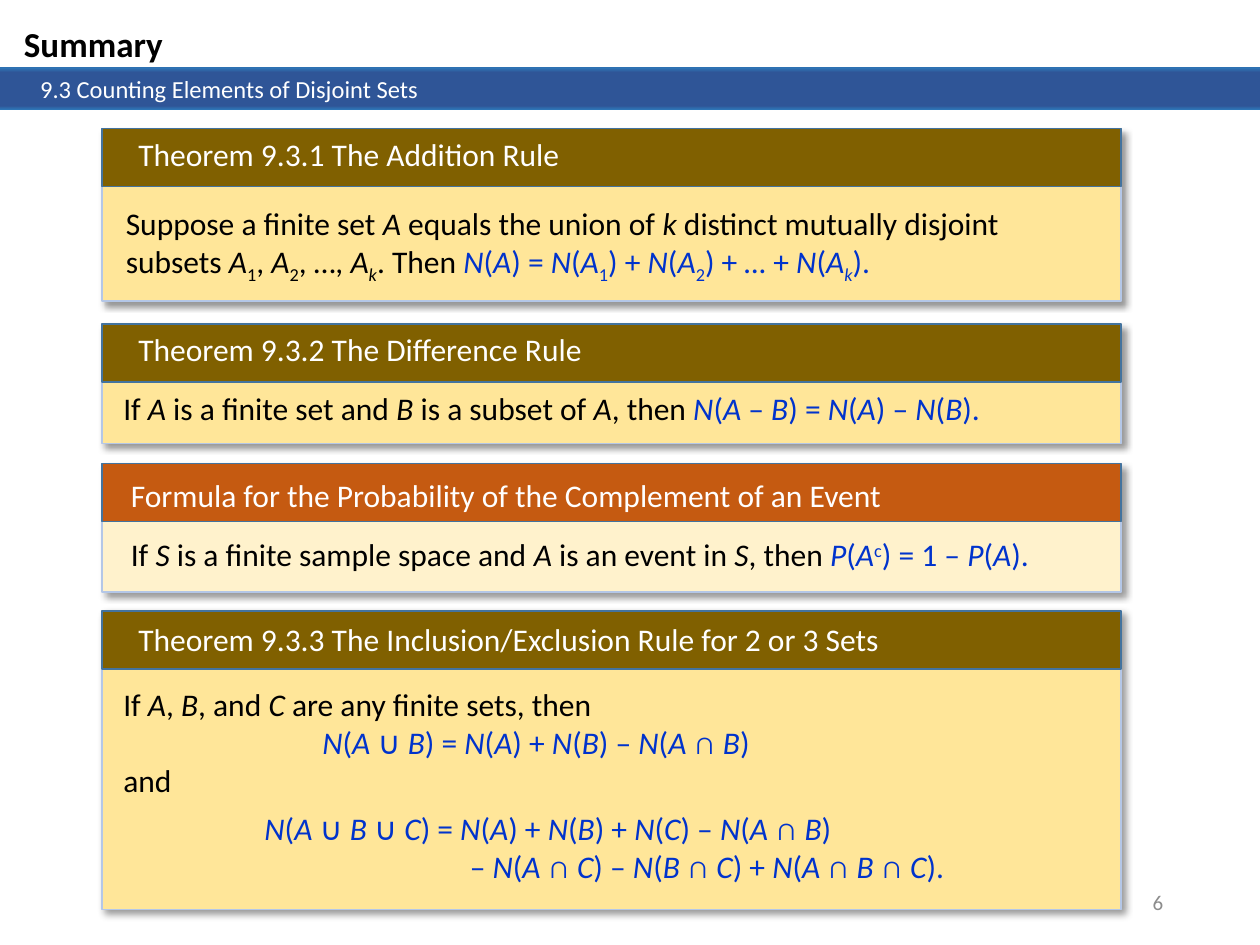
from dataclasses import dataclass
from lxml import etree
from pptx import Presentation
from pptx.dml.color import RGBColor
from pptx.enum.shapes import MSO_SHAPE
from pptx.enum.text import MSO_ANCHOR, MSO_AUTO_SIZE, PP_ALIGN
from pptx.oxml.ns import qn
from pptx.util import Inches, Pt

RECTANGLE = MSO_SHAPE.RECTANGLE
TOP, MIDDLE = MSO_ANCHOR.TOP, MSO_ANCHOR.MIDDLE
LEFT, RIGHT = PP_ALIGN.LEFT, PP_ALIGN.RIGHT
NO_AUTOFIT = MSO_AUTO_SIZE.NONE


@dataclass(frozen=True)
class Theme:
    font: str = "Calibri"
    black: str = "000000"
    white: str = "FFFFFF"
    formula: str = "0033CC"
    number: str = "8C8C8C"
    theorem_head: str = "806000"
    theorem_body: str = "FFE699"
    event_head: str = "C55A11"
    event_body: str = "FFF2CC"
    head_line: str = "43739E"
    body_line: str = "B4C7E7"
    bar_edge: str = "2E75B6"
    bar_core: str = "2F5597"
    title_size: int = 20
    text_size: int = 18
    section_size: int = 14
    number_size: int = 12


THEME = Theme()
BASELINES = {"~": "-25000", "^": "30000"}


def write(paragraph, markup, color, size=THEME.text_size, bold=False):
    """Add runs; *italic*, |formula colour|, ~subscript~ and ^superscript^ toggle."""
    active = set()
    piece = ""
    for char in markup + "\n":
        if char not in "*|~^\n":
            piece += char
            continue
        if piece:
            run = paragraph.add_run()
            run.text = piece
            font = run.font
            font.name, font.size, font.bold = THEME.font, Pt(size), bold
            font.italic = "*" in active
            font.color.rgb = RGBColor.from_string(THEME.formula if "|" in active else color)
            for mark in active & set(BASELINES):
                font._element.set("baseline", BASELINES[mark])
            piece = ""
        active ^= {char}


def add_box(shapes, left, top, width, height, fill=None, line=None):
    """Add a filled rectangle, or a wrapping text box when there is no fill."""
    area = [Inches(length) for length in (left, top, width, height)]
    if fill is None:
        box = shapes.add_textbox(*area)
        box.text_frame.word_wrap = True
        return box
    box = shapes.add_shape(RECTANGLE, *area)
    box.shadow.inherit = False
    box.fill.solid()
    box.fill.fore_color.rgb = RGBColor.from_string(fill)
    if line:
        box.line.color.rgb = RGBColor.from_string(line)
        box.line.width = Pt(1)
    else:
        box.line.fill.background()
    return box


prs = Presentation()
prs.slide_width, prs.slide_height = Inches(10), Inches(7.5)
slide = prs.slides.add_slide(prs.slide_layouts[5])

# Section bar: two overlapping bands with the same gradient
for top, height in ((0.53, 0.3), (0.54, 0.33)):
    bar = add_box(slide.shapes, 0, top, 10, height, THEME.bar_core)
    bar.fill.gradient()
    bar.fill.gradient_angle = 270
    stops = bar._element.spPr.find(qn("a:gradFill")).find(qn("a:gsLst"))
    for stop in list(stops):
        stops.remove(stop)
    for share, color in ((0, THEME.bar_edge), (11, THEME.bar_core),
                         (91, THEME.bar_core), (100, THEME.bar_edge)):
        stop = etree.SubElement(stops, qn("a:gs"), pos=str(share * 1000))
        etree.SubElement(stop, qn("a:srgbClr"), val=color)

bar.text_frame.vertical_anchor = MIDDLE
section = bar.text_frame.paragraphs[0]
section.alignment = LEFT
section._p.get_or_add_pPr().set("marL", str(Inches(0.22)))
write(section, "9.3 Counting Elements of Disjoint Sets", THEME.white, THEME.section_size)

title = slide.shapes.title
title.left, title.top, title.width, title.height = (
    Inches(length) for length in (0.09, 0.13, 2.69, 0.44))
title.text_frame.auto_size = NO_AUTOFIT
title.text_frame.vertical_anchor = TOP
title.text_frame.paragraphs[0].alignment = LEFT
write(title.text_frame.paragraphs[0], "Summary", THEME.black, THEME.title_size, bold=True)

# Rule cards: each statement line is (indent, space after, markup)
CARD_LEFT, CARD_WIDTH, HEAD_HEIGHT = 0.81, 8.09, 0.46
THEOREM = (THEME.theorem_head, THEME.theorem_body)
EVENT = (THEME.event_head, THEME.event_body)
cards = [
    # top, height, heading (left, top), statement (left, top, height), colours
    (1.02, 1.37, (1, 1.02), (0.9, 1.57, 0.71), THEOREM,
     "Theorem 9.3.1 The Addition Rule",
     [(0, 0, "Suppose a finite set *A* equals the union of *k* distinct mutually disjoint "
             "subsets *A*~1~, *A*~2~, …, *A~k~*. Then "
             "|*N*(*A*) = *N*(*A*~1~) + *N*(*A*~2~) + *… *+ *N*(*A~k~*).|")]),
    (2.57, 0.95, (1, 2.57), (0.88, 3.04, 0.4), THEOREM,
     "Theorem 9.3.2 The Difference Rule",
     [(0, 0, "If *A* is a finite set and *B* is a subset of *A*, then "
             "|*N*(*A *–* B*) = *N*(*A*) – *N*(*B*).|")]),
    (3.68, 1.02, (0.94, 3.73), (0.94, 4.2, 0.4), EVENT,
     "Formula for the Probability of the Complement of an Event",
     [(0, 6, "If *S* is a finite sample space and *A* is an event in *S*, then "
             "|*P*(*A*^c^) = 1 – *P*(*A*).|")]),
    (4.85, 2.37, (1, 4.87), (0.88, 5.39, 1.7), THEOREM,
     "Theorem 9.3.3 The Inclusion/Exclusion Rule for 2 or 3 Sets",
     [(0, 0, "If *A*, *B*, and *C* are any finite sets, then"),
      (1.58, 0, "|*N*(*A *∪* B*) = *N*(*A*) + *N*(*B*) – *N*(*A *∩* B*)|"),
      (0, 6, "and"),
      (1.12, 0, "|*N*(*A *∪* B* ∪* C*) = *N*(*A*) + *N*(*B*) + *N*(*C*) – *N*(*A *∩* B*)|"),
      (2.75, 6, "|– *N*(*A *∩* C*) – *N*(*B *∩* C*) + *N*(*A *∩* B* ∩* C*).|")]),
]

for top, height, heading_at, statement_at, colors, heading, statement in cards:
    card = slide.shapes.add_group_shape().shapes
    head_color, body_color = colors
    body = add_box(card, CARD_LEFT, top, CARD_WIDTH, height, body_color, THEME.body_line)
    shadow = etree.SubElement(
        body._element.spPr.find(qn("a:effectLst")), qn("a:outerShdw"),
        blurRad=str(Pt(4)), dist=str(Pt(3)), dir=str(45 * 60000), algn="tl", rotWithShape="0")
    shade = etree.SubElement(shadow, qn("a:srgbClr"), val=THEME.black)
    etree.SubElement(shade, qn("a:alpha"), val="40000")

    add_box(card, CARD_LEFT, top, CARD_WIDTH, HEAD_HEIGHT, head_color, THEME.head_line)
    heading_box = add_box(card, *heading_at, 7.74, 0.4)
    write(heading_box.text_frame.paragraphs[0], heading, THEME.white)

    left, text_top, text_height = statement_at
    frame = add_box(card, left, text_top, 7.92, text_height).text_frame
    for index, (indent, space_after, markup) in enumerate(statement):
        line = frame.add_paragraph() if index else frame.paragraphs[0]
        line._p.get_or_add_pPr().set("marL", str(Inches(indent)))
        line.space_after = Pt(space_after)
        write(line, markup, THEME.black)

page = add_box(slide.shapes, 7.08, 6.96, 2.25, 0.4).text_frame
page.vertical_anchor = MIDDLE
page.paragraphs[0].alignment = RIGHT
write(page.paragraphs[0], "6", THEME.number, THEME.number_size)

prs.save("out.pptx")
